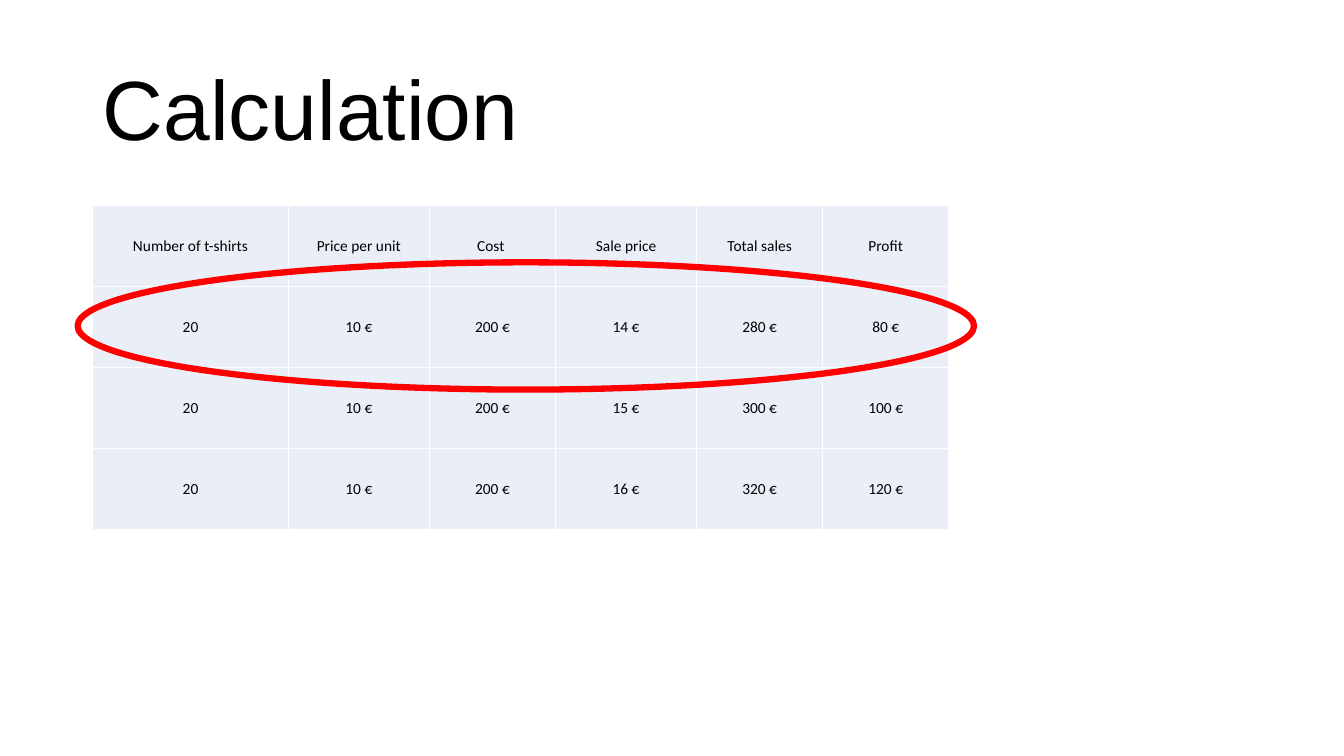
from lxml import etree
from pptx import Presentation
from pptx.dml.color import RGBColor
from pptx.enum.shapes import MSO_SHAPE
from pptx.enum.text import MSO_ANCHOR, PP_ALIGN
from pptx.oxml.ns import qn
from pptx.util import Inches, Pt

ELLIPSE = MSO_SHAPE.OVAL
MIDDLE = MSO_ANCHOR.MIDDLE
CENTER = PP_ALIGN.CENTER

COLORS = {"text": "000000", "cell": "EAEFF7", "border": "FFFFFF", "mark": "FF0000"}

TITLE_BOX = (0.92, 0.4, 11.5, 1.45)
TABLE_BOX = (0.92, 2.04, 8.49, 3.21)
COLUMN_WIDTHS = [1.94, 1.4, 1.25, 1.4, 1.25, 1.25]
HEADERS = ["Number of t-shirts", "Price per unit", "Cost ", "Sale price",
           "Total sales", "Profit"]
UNITS, UNIT_PRICE = 20, 10
SALE_PRICES = [14, 15, 16]


def rgb(name):
    return RGBColor.from_string(COLORS[name])


def add_run(p, text, size, font):
    r = p.add_run()
    r.text = text
    r.font.size = Pt(size)
    r.font.name = font
    r.font.color.rgb = rgb("text")


def add_title(s, box, text):
    tf = s.shapes.add_textbox(*map(Inches, box)).text_frame
    tf.word_wrap = True
    tf.vertical_anchor = MIDDLE
    p = tf.paragraphs[0]
    p.line_spacing = 0.9
    add_run(p, text, 60, "Arial")


def set_borders(cell):
    """Draw a thin line on all four sides; call before filling the cell."""
    tc_pr = cell._tc.get_or_add_tcPr()
    for side in ("lnL", "lnR", "lnT", "lnB"):
        ln = etree.SubElement(tc_pr, qn(f"a:{side}"), w=str(Pt(1)))
        fill = etree.SubElement(ln, qn("a:solidFill"))
        etree.SubElement(fill, qn("a:srgbClr"), val=COLORS["border"])


def fill_cell(cell, text):
    set_borders(cell)
    cell.fill.solid()
    cell.fill.fore_color.rgb = rgb("cell")
    cell.margin_left = cell.margin_right = cell.margin_top = Inches(0.01)
    cell.margin_bottom = 0
    cell.vertical_anchor = MIDDLE
    p = cell.text_frame.paragraphs[0]
    p.alignment = CENTER
    add_run(p, text, 11, "Calibri")


def profit_row(sale_price):
    cost, sales = UNITS * UNIT_PRICE, UNITS * sale_price
    amounts = [UNIT_PRICE, cost, sale_price, sales, sales - cost]
    return [str(UNITS)] + [f"{amount} €" for amount in amounts]


def add_profit_table(s, box, rows):
    table = s.shapes.add_table(len(rows), len(HEADERS), *map(Inches, box)).table
    table.first_row = table.horz_banding = False
    for column, width in zip(table.columns, COLUMN_WIDTHS):
        column.width = Inches(width)
    for i, row in enumerate(rows):
        table.rows[i].height = Inches(box[3] / len(rows))
        for j, text in enumerate(row):
            fill_cell(table.cell(i, j), text)


def circle_row(s, box, row, row_count):
    """Ring one row of the table that fills the box."""
    left, top, width, height = box
    row_height = height / row_count
    ring_box = (left - 0.15, top + row * row_height - 0.24,
                width + 0.4, row_height + 0.46)
    ring = s.shapes.add_shape(ELLIPSE, *map(Inches, ring_box))
    ring.shadow.inherit = False
    ring.fill.background()
    ring.line.color.rgb = rgb("mark")
    ring.line.width = Pt(4.5)


def main():
    prs = Presentation()
    prs.slide_width, prs.slide_height = Inches(13.33), Inches(7.5)
    s = prs.slides.add_slide(prs.slide_layouts[6])
    rows = [HEADERS] + [profit_row(price) for price in SALE_PRICES]
    add_title(s, TITLE_BOX, "Calculation")
    add_profit_table(s, TABLE_BOX, rows)
    circle_row(s, TABLE_BOX, 1, len(rows))
    prs.save("out.pptx")


if __name__ == "__main__":
    main()
